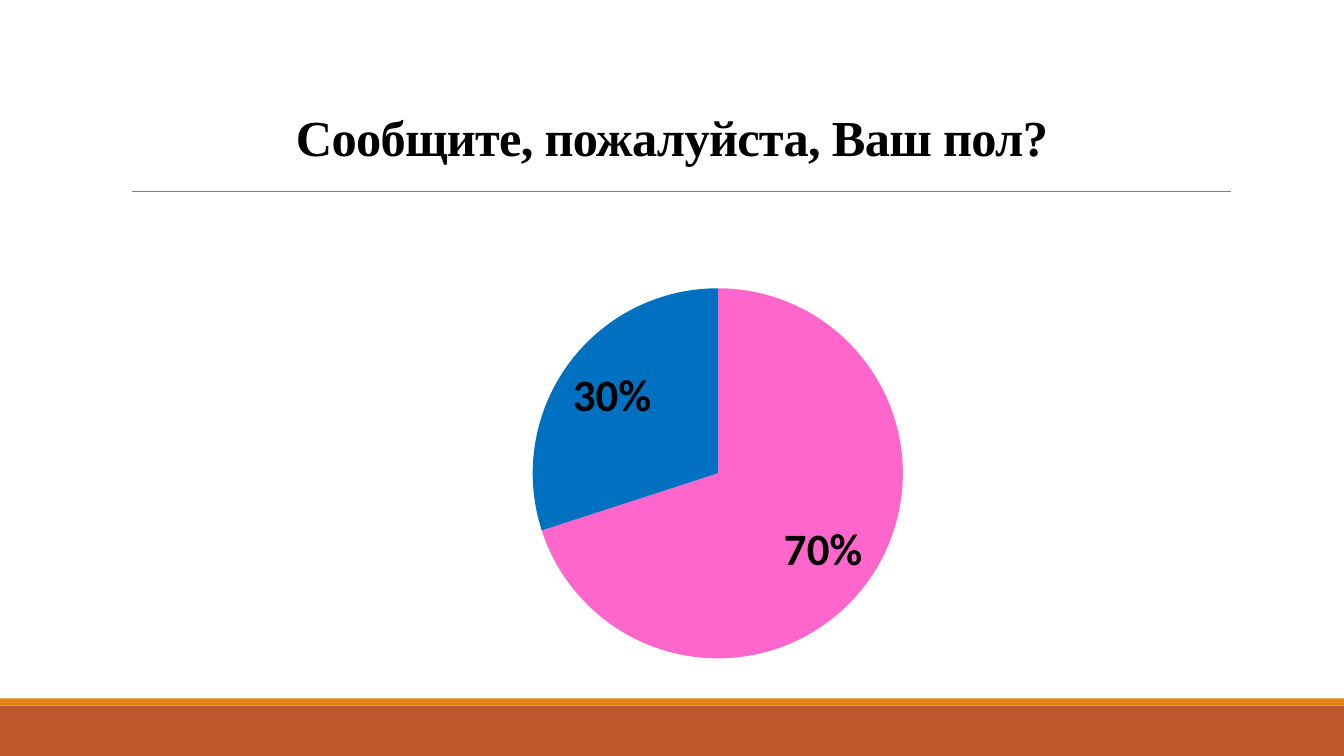
from dataclasses import dataclass

from lxml import etree
from pptx import Presentation
from pptx.chart.data import CategoryChartData
from pptx.dml.color import RGBColor
from pptx.enum.chart import XL_CHART_TYPE as ChartType, XL_LABEL_POSITION as LabelPos
from pptx.enum.shapes import MSO_CONNECTOR as Connector, MSO_SHAPE as Shape
from pptx.enum.text import MSO_ANCHOR as Anchor, PP_ALIGN as Align
from pptx.oxml import parse_xml
from pptx.oxml.ns import nsdecls, qn
from pptx.slide import Slide
from pptx.util import Inches, Pt

WIDTH, HEIGHT = 13.33, 7.5
QUESTION = "Сообщите, пожалуйста, Ваш пол?"


@dataclass
class Band:
    top: float
    height: float
    color: str


@dataclass
class Slice:
    percent: int
    color: str


BANDS = [Band(7, 0.5, "BD582C"), Band(6.93, 0.07, "E48312")]
SLICES = [Slice(70, "FF66CC"), Slice(30, "0070C0")]


def rgb(color: str) -> RGBColor:
    return RGBColor.from_string(color)


def set_font(font, name: str, size: float, color: str = "000000", bold: bool = False) -> None:
    font.name, font.size, font.bold = name, Pt(size), bold
    font.color.rgb = rgb(color)


def add_band(s: Slide, band: Band) -> None:
    sp = s.shapes.add_shape(
        Shape.RECTANGLE, 0, Inches(band.top), Inches(WIDTH), Inches(band.height)
    )
    sp.shadow.inherit = False
    sp.fill.solid()
    sp.fill.fore_color.rgb = rgb(band.color)
    sp.line.fill.background()


def add_rule(s: Slide, left: float, right: float, y: float, color: str) -> None:
    line = s.shapes.add_connector(
        Connector.STRAIGHT, Inches(left), Inches(y), Inches(right), Inches(y)
    )
    line.line.color.rgb = rgb(color)
    line.line.width = Pt(0.5)
    etree.SubElement(line._element.spPr, qn("a:effectLst"))


def add_title(s: Slide, text: str, *, top: float, height: float, size: float,
              font: str, spacing: float) -> None:
    tf = s.shapes.add_textbox(0, Inches(top), Inches(WIDTH), Inches(height)).text_frame
    tf.word_wrap = True
    tf.vertical_anchor = Anchor.BOTTOM
    p = tf.paragraphs[0]
    p.alignment = Align.CENTER
    p.line_spacing = 0.85
    r = p.add_run()
    r.text = text
    set_font(r.font, font, size, bold=True)
    r._r.get_or_add_rPr().set("spc", str(round(spacing * 100)))


def add_pie(s: Slide, name: str, slices: list[Slice]) -> None:
    data = CategoryChartData()
    data.categories = [f"{part.percent}%" for part in slices]
    data.add_series(name, [part.percent for part in slices])
    chart = s.shapes.add_chart(
        ChartType.PIE, Inches(2.23), Inches(2.08), Inches(9.78), Inches(4.59), data
    ).chart
    chart.has_legend = False
    chart.has_title = False
    set_font(chart.font, "Calibri", 10)

    plot = chart.plots[0]
    plot.vary_by_categories = True
    for i, part in enumerate(slices):
        fill = plot.series[0].points[i].format.fill
        fill.solid()
        fill.fore_color.rgb = rgb(part.color)

    labels = plot.series[0].data_labels
    labels.show_percentage = True
    labels.show_value = False
    labels.number_format = "0%"
    labels.number_format_is_linked = False
    labels.position = LabelPos.INSIDE_END
    set_font(labels.font, "Calibri", 32, bold=True)

    area = chart._chartSpace.chart.plotArea
    for old in area.findall(qn("c:layout")):
        area.remove(old)
    box = {"x": 0.31, "y": 0.17, "w": 0.38, "h": 0.8}
    modes = '<c:layoutTarget val="inner"/><c:xMode val="edge"/><c:yMode val="edge"/>'
    sizes = "".join(f'<c:{key} val="{value}"/>' for key, value in box.items())
    area.insert(0, parse_xml(
        f'<c:layout {nsdecls("c")}><c:manualLayout>{modes}{sizes}</c:manualLayout></c:layout>'
    ))


def main() -> None:
    prs = Presentation()
    prs.slide_width, prs.slide_height = Inches(WIDTH), Inches(HEIGHT)
    s = prs.slides.add_slide(prs.slide_layouts[6])
    for band in BANDS:
        add_band(s, band)
    add_rule(s, 1.31, 12.21, 1.9, "808080")
    add_title(s, QUESTION, top=0.22, height=1.48,
              size=36, font="Times New Roman", spacing=-0.5)
    add_pie(s, QUESTION, SLICES)
    prs.save("out.pptx")


if __name__ == "__main__":
    main()
